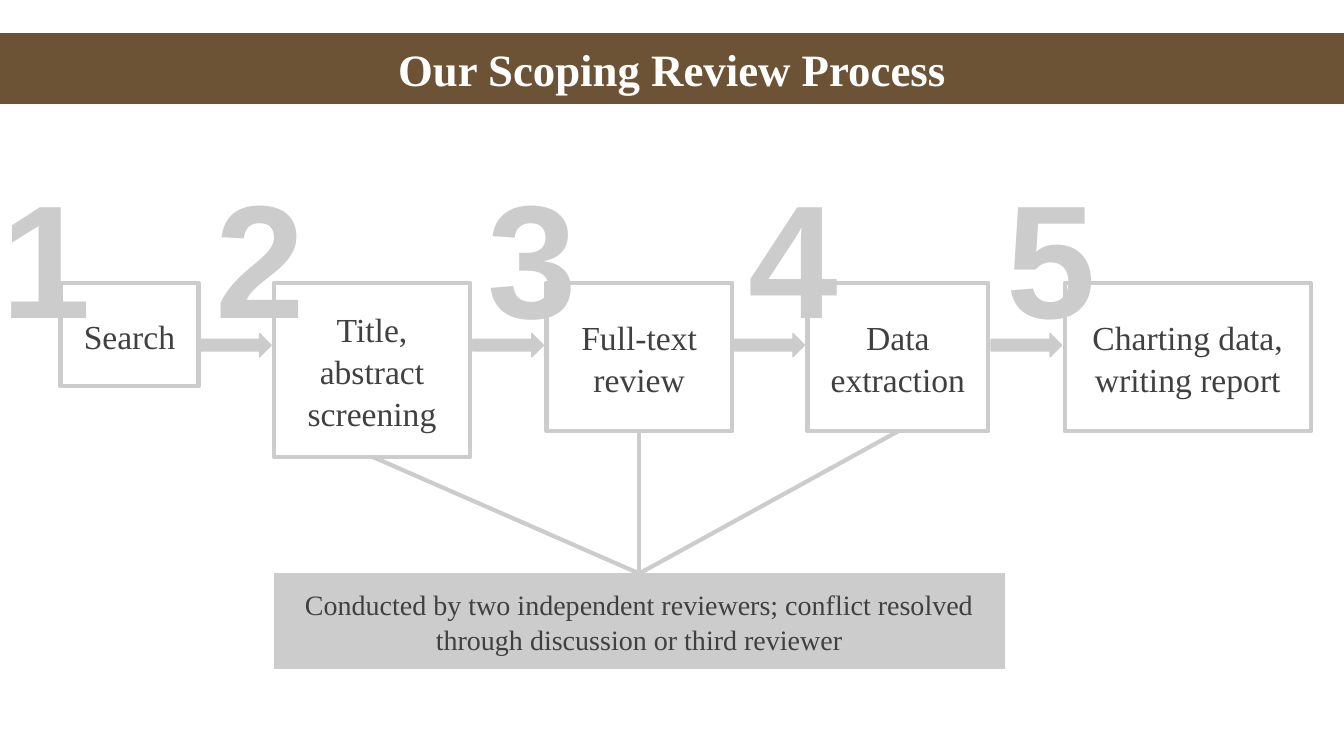
from dataclasses import dataclass
from lxml.etree import SubElement
from pptx import Presentation
from pptx.dml.color import RGBColor
from pptx.enum.shapes import MSO_CONNECTOR, MSO_SHAPE
from pptx.enum.text import MSO_ANCHOR, MSO_AUTO_SIZE, PP_ALIGN
from pptx.oxml.ns import qn
from pptx.shapes.autoshape import Shape
from pptx.slide import Slide
from pptx.util import Inches, Pt


@dataclass(frozen=True)
class Theme:
    brown: RGBColor = RGBColor(0x6C, 0x53, 0x36)
    grey: RGBColor = RGBColor(0xCC, 0xCC, 0xCC)
    dark: RGBColor = RGBColor(0x40, 0x40, 0x40)
    white: RGBColor = RGBColor(0xFF, 0xFF, 0xFF)
    body_font: str = "Times New Roman"
    numeral_font: str = "Arial"
    title_size: int = 32
    step_size: int = 24
    note_size: int = 20
    numeral_size: int = 115
    thin: int = 1
    thick: int = 3
    line_spacing: float = 1.05


@dataclass(frozen=True)
class Step:
    label: str
    left: float
    width: float
    height: float
    by_two_reviewers: bool = False


THEME = Theme()
STEP_TOP = 2.81
STEPS = [
    Step("Search", 0.6, 1.37, 1.02),
    Step("Title, abstract screening", 2.72, 1.94, 1.72, True),
    Step("Full-text review", 5.42, 1.84, 1.47, True),
    Step("Data extraction", 8.01, 1.79, 1.47, True),
    Step("Charting data, writing report", 10.56, 2.44, 1.47),
]
NOTE = ("Conducted by two independent reviewers; conflict resolved "
        "through discussion or third reviewer")


def add_title(slide: Slide, text: str) -> None:
    title = slide.shapes.title
    title.left, title.top = Inches(0), Inches(0.33)
    title.width, title.height = Inches(13.33), Inches(0.7)
    title.fill.solid()
    title.fill.fore_color.rgb = THEME.brown
    title.line.color.rgb = THEME.brown
    title.line.width = Pt(THEME.thin)
    write(title, text, THEME.title_size, THEME.white, bold=True)
    title.text_frame.paragraphs[0].line_spacing = 1.0


def write(shape: Shape, text: str, size: int, color: RGBColor,
          font_name: str = THEME.body_font, bold: bool = False,
          align: PP_ALIGN = PP_ALIGN.CENTER) -> None:
    frame = shape.text_frame
    frame.text = text
    frame.word_wrap = True
    frame.auto_size = MSO_AUTO_SIZE.NONE
    frame.vertical_anchor = MSO_ANCHOR.MIDDLE
    paragraph = frame.paragraphs[0]
    paragraph.alignment = align
    font = paragraph.font
    font.name, font.size, font.bold = font_name, Pt(size), bold
    font.color.rgb = color


def add_block(slide: Slide, kind: MSO_SHAPE, left: float, top: float,
              width: float, height: float, filled: bool = True) -> Shape:
    block = slide.shapes.add_shape(kind, Inches(left), Inches(top),
                                   Inches(width), Inches(height))
    block.shadow.inherit = False
    if filled:
        block.fill.solid()
        block.fill.fore_color.rgb = THEME.grey
    else:
        block.fill.background()
    block.line.color.rgb = THEME.grey
    block.line.width = Pt(THEME.thin if filled else THEME.thick)
    return block


def add_numeral(slide: Slide, number: int, step: Step) -> None:
    numeral = slide.shapes.add_textbox(Inches(step.left - 0.68), Inches(1.51),
                                       Inches(1.26), Inches(2.04))
    write(numeral, str(number), THEME.numeral_size, THEME.grey,
          THEME.numeral_font, bold=True, align=PP_ALIGN.LEFT)
    frame = numeral.text_frame
    frame.vertical_anchor = MSO_ANCHOR.TOP
    frame.word_wrap = False
    frame.auto_size = MSO_AUTO_SIZE.SHAPE_TO_FIT_TEXT


def add_step(slide: Slide, step: Step) -> Shape:
    box = add_block(slide, MSO_SHAPE.FLOWCHART_PROCESS, step.left, STEP_TOP,
                    step.width, step.height, filled=False)
    write(box, step.label, THEME.step_size, THEME.dark)
    box.text_frame.paragraphs[0].line_spacing = THEME.line_spacing
    return box


def add_note(slide: Slide) -> Shape:
    note = add_block(slide, MSO_SHAPE.FLOWCHART_PROCESS, 2.72, 5.69, 7.24, 0.94)
    write(note, NOTE, THEME.note_size, THEME.dark)
    note.text_frame.paragraphs[0].line_spacing = THEME.line_spacing
    return note


def join(slide: Slide, note: Shape, box: Shape) -> None:
    link = slide.shapes.add_connector(MSO_CONNECTOR.STRAIGHT, 0, 0, 0, 0)
    link.begin_connect(note, 0)
    link.end_connect(box, 2)
    link.line.color.rgb = THEME.grey
    link.line.width = Pt(THEME.thick)
    SubElement(link._element.spPr, qn("a:effectLst"))


def main() -> None:
    prs = Presentation()
    prs.slide_width, prs.slide_height = Inches(13.33), Inches(7.5)
    slide = prs.slides.add_slide(prs.slide_layouts[5])
    add_title(slide, "Our Scoping Review Process")

    # Numbered steps
    boxes = []
    for number, step in enumerate(STEPS, start=1):
        add_numeral(slide, number, step)
        boxes.append(add_step(slide, step))

    # Arrows leading into each following step
    for step in STEPS[1:]:
        add_block(slide, MSO_SHAPE.RIGHT_ARROW, step.left - 0.73, 3.31, 0.7, 0.23)

    # Reviewer note and its links
    note = add_note(slide)
    for step, box in zip(STEPS, boxes):
        if step.by_two_reviewers:
            join(slide, note, box)

    prs.save("out.pptx")


if __name__ == "__main__":
    main()
